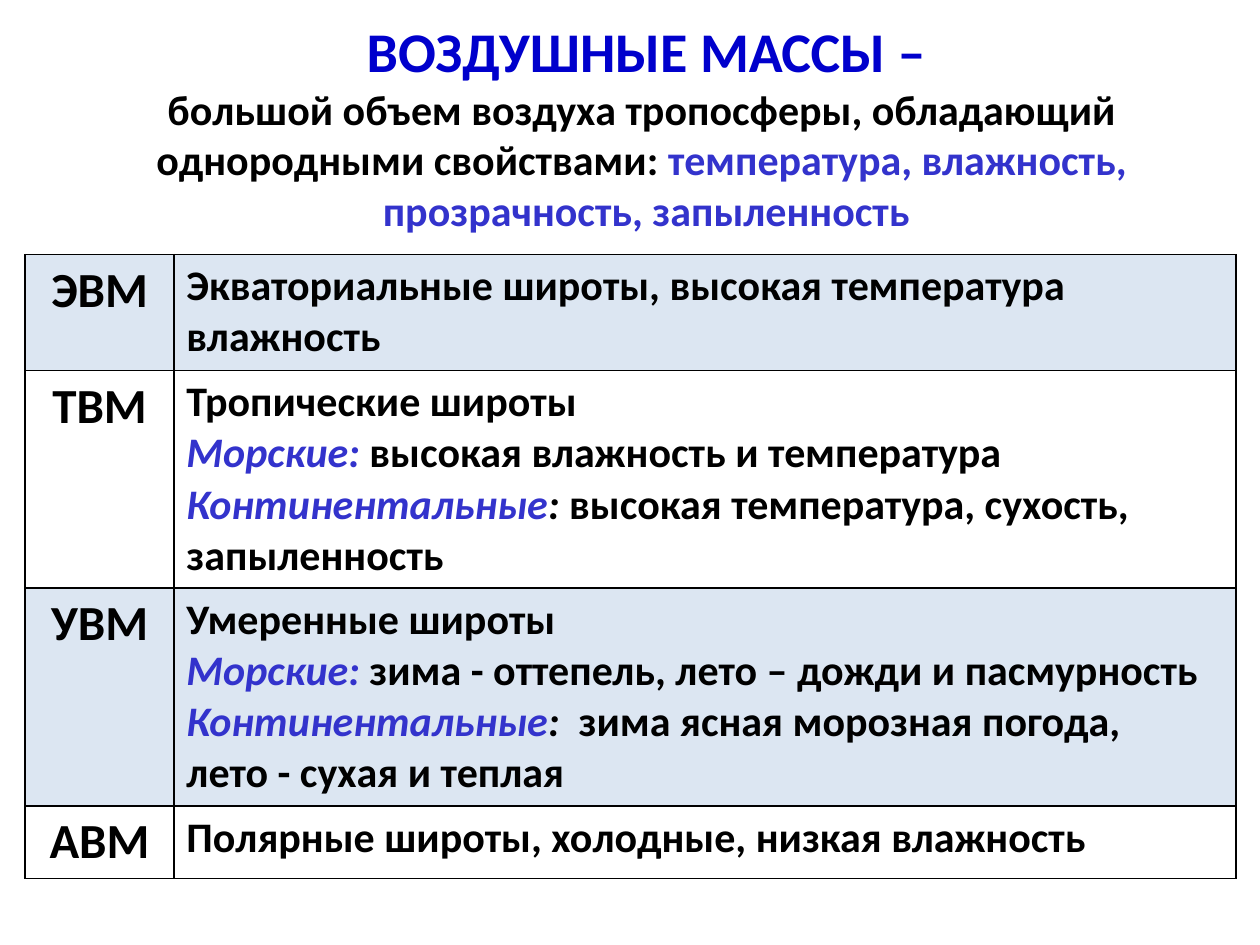
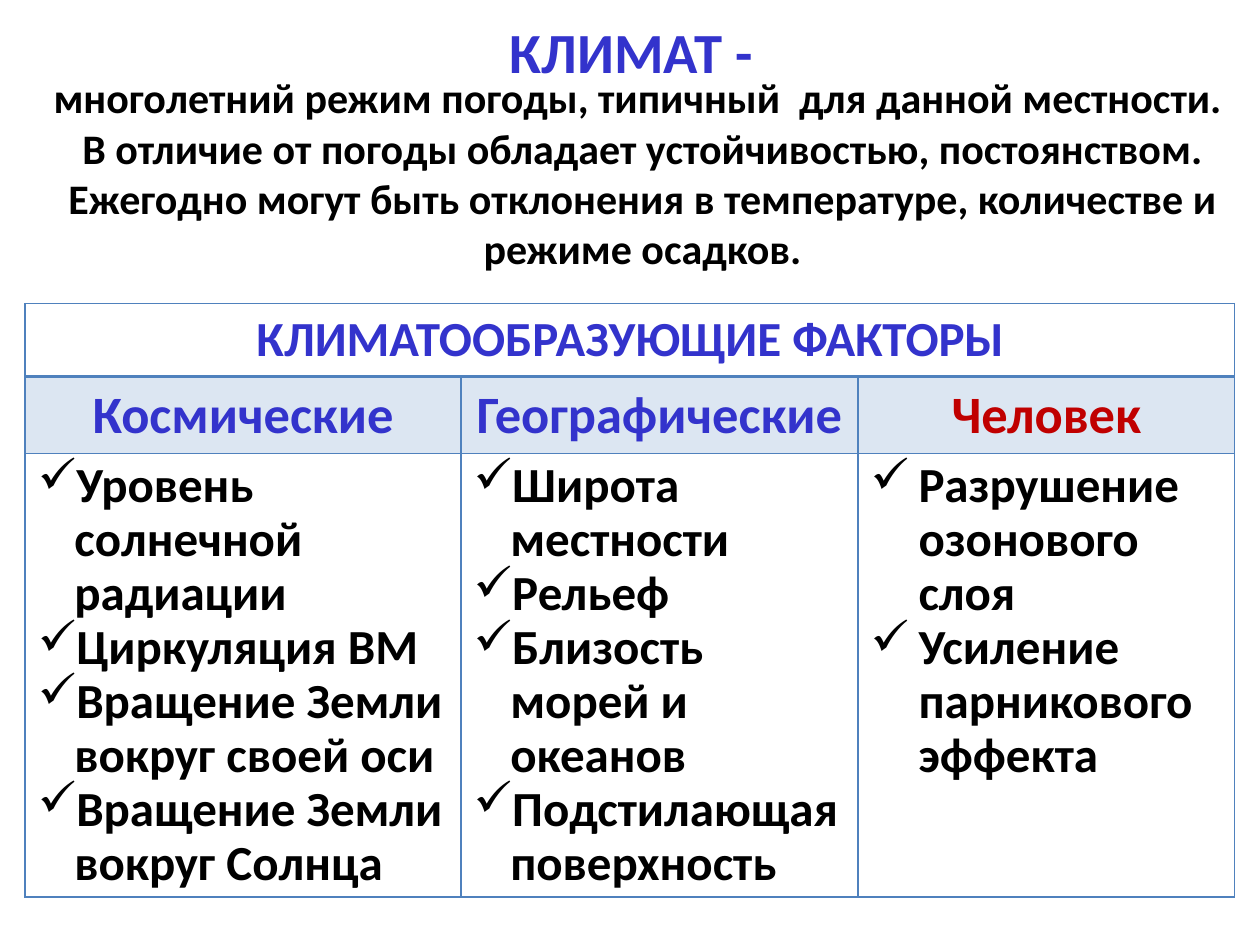
import pptx
import pptx.dml.color
import pptx.enum.text
import pptx.oxml
import pptx.oxml.ns
import pptx.util

RGB = pptx.dml.color.RGBColor
Pt = pptx.util.Pt
ALIGN = pptx.enum.text.PP_ALIGN
ANCHOR = pptx.enum.text.MSO_ANCHOR
AUTO = pptx.enum.text.MSO_AUTO_SIZE

BLACK = RGB(0x00, 0x00, 0x00)
WHITE = RGB(0xFF, 0xFF, 0xFF)
DEEP_BLUE = RGB(0x00, 0x00, 0xCC)
BLUE = RGB(0x33, 0x33, 0xCC)
RED = RGB(0xC0, 0x00, 0x00)
PALE = RGB(0xDC, 0xE6, 0xF2)
STEEL = RGB(0x4F, 0x81, 0xBD)

BASE = {"name": "Calibri", "bold": True, "italic": False}
FRAME = {"word_wrap": True, "auto_size": AUTO.NONE}
COLS, ROWS = 100, 75
TABLE_LEFT = 2


def run(text, color=BLACK, italic=False):
    return text, color, italic


def term(text):
    return run(text, BLUE, True)


class Deck:
    def __init__(self):
        self.prs = pptx.Presentation()
        self.prs.slide_width = pptx.util.Inches(10)
        self.prs.slide_height = pptx.util.Inches(7.5)
        self.s = None

    def x(self, cols):
        return round(self.prs.slide_width * cols / COLS)

    def y(self, rows):
        return round(self.prs.slide_height * rows / ROWS)

    def box(self, left, top, width, height):
        return self.x(left), self.y(top), self.x(width), self.y(height)

    def add_slide(self):
        self.s = self.prs.slides.add_slide(self.prs.slide_layouts[5])

    def fill_text(self, tf, lines, size, align=ALIGN.LEFT, hang=None):
        sizes = size if isinstance(size, list) else [size] * len(lines)
        for i, (line, pt) in enumerate(zip(lines, sizes)):
            p = tf.paragraphs[0] if i == 0 else tf.add_paragraph()
            p.alignment = align
            if hang:
                self.check_mark(p, hang)
            for text, color, italic in line:
                r = p.add_run()
                r.text = text
                for key, value in {**BASE, "size": Pt(pt), "italic": italic}.items():
                    setattr(r.font, key, value)
                r.font.color.rgb = color

    def check_mark(self, p, hang):
        p.line_spacing = 0.9
        pPr = p._p.get_or_add_pPr()
        pPr.set("marL", str(self.x(hang)))
        pPr.set("indent", str(-self.x(hang)))
        bullet = pptx.oxml.parse_xml(
            f'<a:buChar {pptx.oxml.ns.nsdecls("a")} char="✓"/>')
        pPr.append(bullet)

    def title(self, place, lines, size):
        sp = self.s.shapes.title
        values = dict(zip(("left", "top", "width", "height"), self.box(*place)))
        for key, value in values.items():
            setattr(sp, key, value)
        self.frame(sp.text_frame, ANCHOR.MIDDLE)
        self.fill_text(sp.text_frame, lines, size, ALIGN.CENTER)

    def text(self, place, lines, size):
        tf = self.s.shapes.add_textbox(*self.box(*place)).text_frame
        self.frame(tf, ANCHOR.TOP)
        self.fill_text(tf, lines, size, ALIGN.CENTER)

    def frame(self, tf, anchor):
        for key, value in {**FRAME, "vertical_anchor": anchor}.items():
            setattr(tf, key, value)

    def table(self, top, widths, heights, line, heavy=()):
        place = self.box(TABLE_LEFT, top, sum(widths), sum(heights))
        table = self.s.shapes.add_table(len(heights), len(widths), *place).table
        table.first_row = table.horz_banding = False
        for column, width in zip(table.columns, widths):
            column.width = self.x(width)
        for row, height in zip(table.rows, heights):
            row.height = self.y(height)
        for i, row in enumerate(table.rows):
            for cell in row.cells:
                self.borders(cell, line, i, heavy)
        return table

    def borders(self, cell, color, row, heavy):
        tcPr = cell._tc.get_or_add_tcPr()
        for i, side in enumerate(("lnL", "lnR", "lnT", "lnB")):
            width = Pt(2 if (row, side) in heavy else 1)
            tcPr.insert(i, pptx.oxml.parse_xml(
                f'<a:{side} {pptx.oxml.ns.nsdecls("a")} w="{width}"><a:solidFill>'
                f'<a:srgbClr val="{color}"/></a:solidFill></a:{side}>'))

    def cell(self, cell, lines, size, fill=WHITE, align=ALIGN.LEFT, hang=None):
        cell.fill.solid()
        cell.fill.fore_color.rgb = fill
        self.fill_text(cell.text_frame, lines, size, align, hang)


def air_masses(deck):
    deck.add_slide()
    deck.title((-0.3, 1.3, 103.2, 17.3), [
        [run("ВОЗДУШНЫЕ МАССЫ –", DEEP_BLUE)],
        [run("большой объем воздуха тропосферы, обладающий ")],
        [run("однородными свойствами: "), run("температура, влажность, ", BLUE)],
        [run("прозрачность, запыленность", BLUE)],
    ], [32, 24, 24, 24])
    masses = {
        "ЭВМ": [[run("Экваториальные широты, высокая температура влажность")]],
        "ТВМ": [
            [run("Тропические широты")],
            [term("Морские: "), run("высокая влажность и температура")],
            [term("Континентальные"), run(": ", italic=True),
             run("высокая температура, сухость, запыленность")],
        ],
        "УВМ": [
            [run("Умеренные широты")],
            [term("Морские: "), run("зима - оттепель, лето – дожди и пасмурность")],
            [term("Континентальные"), run(": ", italic=True),
             run(" зима ясная морозная погода,")],
            [run("лето - сухая и теплая")],
        ],
        "АВМ": [[run("Полярные широты, холодные, низкая влажность")]],
    }
    table = deck.table(20.2, [11.8, 84.3], [9.2, 17.2, 17.3, 5.7], BLACK)
    for i, (name, traits) in enumerate(masses.items()):
        fill = WHITE if i % 2 else PALE
        deck.cell(table.cell(i, 0), [[run(name)]], 28, fill, ALIGN.CENTER)
        deck.cell(table.cell(i, 1), traits, 24, fill)


def climate(deck):
    deck.add_slide()
    deck.title((5.1, 1.3, 90, 5.4), [[run("КЛИМАТ -", BLUE)]], 32.4)
    deck.text((2, 5.2, 98, 18), [
        [run("многолетний режим погоды, типичный  для данной местности. ")],
        [run("В отличие от погоды обладает устойчивостью, постоянством.")],
        [run("Ежегодно могут быть отклонения в температуре, "
             "количестве и режиме осадков.")],
    ], 24)
    factors = [
        ("Космические", BLUE, 2.9, [
            "Уровень солнечной радиации", "Циркуляция ВМ",
            "Вращение Земли вокруг своей оси", "Вращение Земли вокруг Солнца"]),
        ("Географические", BLUE, 2.9, [
            "Широта местности", "Рельеф", "Близость морей и океанов",
            "Подстилающая поверхность"]),
        ("Человек", RED, 3.8, [
            "Разрушение озонового слоя", "Усиление парникового эффекта"]),
    ]
    table = deck.table(24.1, [34.6, 31.5, 29.9], [5.8, 6.1, 35.1], STEEL,
                       {(0, "lnB"), (1, "lnT")})
    table.cell(0, 0).merge(table.cell(0, 2))
    deck.cell(table.cell(0, 0), [[run("КЛИМАТООБРАЗУЮЩИЕ ФАКТОРЫ", BLUE)]], 28,
              align=ALIGN.CENTER)
    for i, (name, color, hang, items) in enumerate(factors):
        deck.cell(table.cell(1, i), [[run(name, color)]], 30, PALE, ALIGN.CENTER)
        deck.cell(table.cell(2, i), [[run(item)] for item in items], 28, hang=hang)


def main():
    deck = Deck()
    air_masses(deck)
    climate(deck)
    deck.prs.save("out.pptx")


if __name__ == "__main__":
    main()
